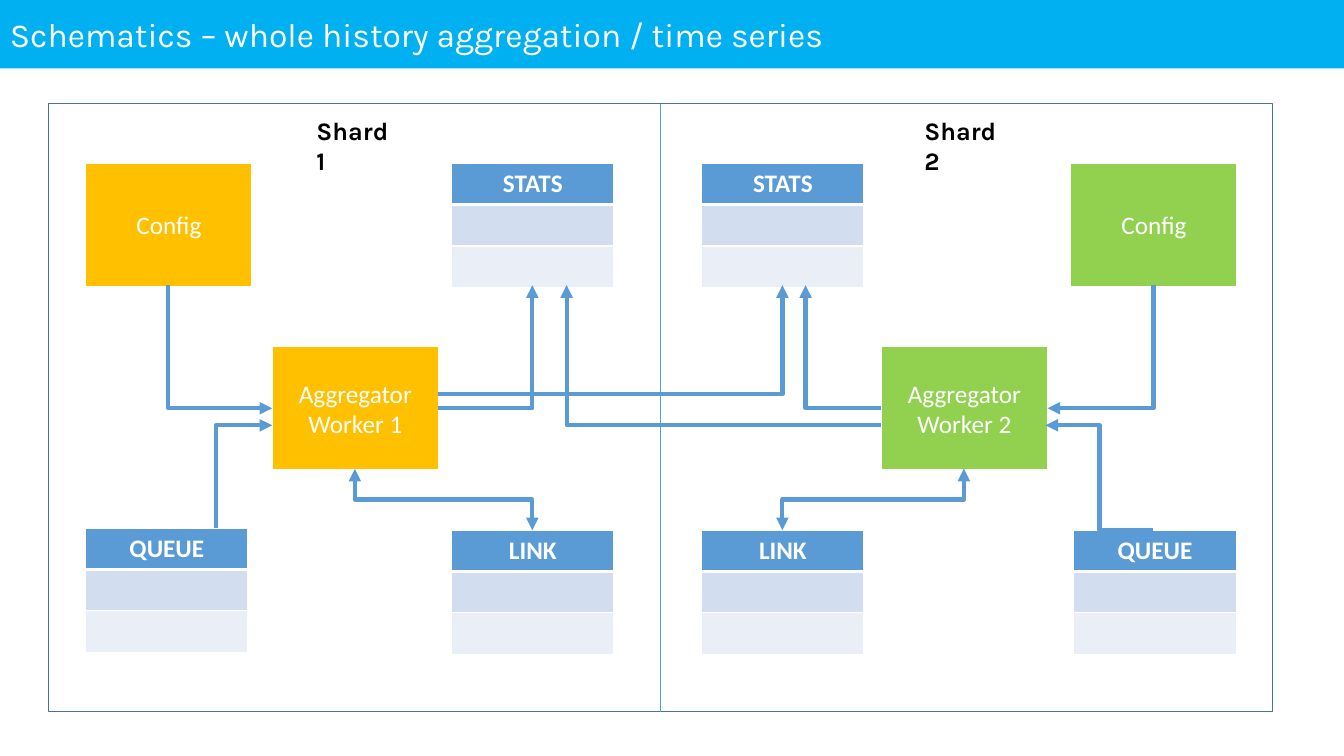
from dataclasses import dataclass
from typing import Optional

from lxml.etree import SubElement
from pptx import Presentation
from pptx.dml.color import RGBColor
from pptx.enum.shapes import MSO_CONNECTOR, MSO_SHAPE
from pptx.enum.text import MSO_ANCHOR, PP_ALIGN
from pptx.oxml import parse_xml
from pptx.oxml.ns import nsdecls, qn
from pptx.shapes.autoshape import Shape
from pptx.shapes.connector import Connector
from pptx.shapes.shapetree import SlideShapes
from pptx.text.text import TextFrame
from pptx.util import Inches, Pt


@dataclass(frozen=True)
class Theme:
    title_bar: str = "00B0F0"
    shard_1: str = "FFC000"
    shard_2: str = "92D050"
    blue: str = "5B9BD5"
    frame: str = "43739E"
    white: str = "FFFFFF"
    black: str = "000000"
    rows: tuple[str, ...] = ("5B9BD5", "D2DEEF", "EAEFF7")
    heading_font: str = "Karla"
    body_font: str = "Calibri"
    title_size: int = 24
    body_size: int = 18


@dataclass(frozen=True)
class Box:
    text: str
    left: float
    top: float
    fill: str


@dataclass(frozen=True)
class Store:
    name: str
    left: float
    top: float


@dataclass(frozen=True)
class Flow:
    """An elbow arrow; bend is the share of the way to its middle leg, None for one corner."""
    start: tuple[float, float]
    end: tuple[float, float]
    vertical_first: bool = True
    bend: Optional[float] = None
    two_way: bool = False


THEME = Theme()
BOX_WIDTH, BOX_HEIGHT = 1.65, 1.22
STORE_WIDTH, ROW_HEIGHT = 1.61, 0.41
TOP, MIDDLE, BOTTOM = 1.62, 3.44, 5.26
STORE_FOOT, WORKER_FOOT = 2.83, 4.65
CONFIG_LANE, QUEUE_LANE, REMOTE_LANE = 4.05, 4.22, 3.91

BOXES = (
    Box("Config", 0.85, TOP, THEME.shard_1),
    Box("Aggregator\nWorker 1", 2.7, MIDDLE, THEME.shard_1),
    Box("Config", 10.62, TOP, THEME.shard_2),
    Box("Aggregator\nWorker 2", 8.74, MIDDLE, THEME.shard_2),
)
STORES = (
    Store("STATS", 4.48, TOP),
    Store("STATS", 6.96, TOP),
    Store("QUEUE", 0.85, 5.24),
    Store("LINK", 4.48, BOTTOM),
    Store("LINK", 6.96, BOTTOM),
    Store("QUEUE", 10.65, BOTTOM),
)
FLOWS = (
    Flow((1.67, STORE_FOOT), (2.7, CONFIG_LANE)),
    Flow((2.14, 5.24), (2.7, QUEUE_LANE)),
    Flow((4.34, CONFIG_LANE), (5.28, STORE_FOOT), vertical_first=False),
    Flow((4.34, REMOTE_LANE), (7.76, STORE_FOOT), vertical_first=False),
    Flow((3.52, WORKER_FOOT), (5.28, BOTTOM), bend=0.5, two_way=True),
    Flow((9.56, WORKER_FOOT), (7.76, BOTTOM), bend=0.5, two_way=True),
    Flow((8.74, CONFIG_LANE), (7.99, STORE_FOOT), vertical_first=False),
    Flow((8.74, QUEUE_LANE), (5.62, STORE_FOOT), vertical_first=False),
    Flow((11.44, STORE_FOOT), (10.39, CONFIG_LANE)),
    Flow((11.44, BOTTOM), (10.37, QUEUE_LANE), vertical_first=False, bend=0.5),
)


def write(frame: TextFrame, text: str, color: str, font: str = THEME.body_font,
          size: int = THEME.body_size, bold: bool = False,
          align: PP_ALIGN = PP_ALIGN.CENTER) -> None:
    frame.text = text
    for paragraph in frame.paragraphs:
        paragraph.alignment = align
        paragraph.font.size = Pt(size)
        for run in paragraph.runs:
            run.font.name = font
            run.font.size = Pt(size)
            run.font.bold = bold
            run.font.color.rgb = RGBColor.from_string(color)


def add_rectangle(shapes: SlideShapes, left: float, top: float, width: float, height: float,
                  fill: Optional[str] = None, line: Optional[str] = None) -> Shape:
    rectangle = shapes.add_shape(MSO_SHAPE.RECTANGLE, Inches(left), Inches(top),
                                 Inches(width), Inches(height))
    rectangle.shadow.inherit = False
    if fill:
        rectangle.fill.solid()
        rectangle.fill.fore_color.rgb = RGBColor.from_string(fill)
    else:
        rectangle.fill.background()
    if line:
        rectangle.line.color.rgb = RGBColor.from_string(line)
        rectangle.line.width = Pt(1)
    else:
        rectangle.line.fill.background()
    rectangle.text_frame.vertical_anchor = MSO_ANCHOR.MIDDLE
    return rectangle


def add_store(shapes: SlideShapes, store: Store) -> None:
    table = shapes.add_table(len(THEME.rows), 1, Inches(store.left), Inches(store.top),
                             Inches(STORE_WIDTH), Inches(ROW_HEIGHT * len(THEME.rows))).table
    for index, color in enumerate(THEME.rows):
        table.rows[index].height = Inches(ROW_HEIGHT)
        cell = table.cell(index, 0)
        write(cell.text_frame, "" if index else store.name, THEME.white, bold=True)
        cell.fill.solid()
        cell.fill.fore_color.rgb = RGBColor.from_string(color)
        above = 3 if index == 1 else 1
        below = 3 if index == 0 else 1
        borders = (("lnL", 1), ("lnR", 1), ("lnT", above), ("lnB", below))
        for position, (side, points) in enumerate(borders):
            cell._tc.get_or_add_tcPr().insert(position, parse_xml(
                f'<a:{side} {nsdecls("a")} w="{Pt(points)}"><a:solidFill>'
                f'<a:srgbClr val="{THEME.white}"/></a:solidFill></a:{side}>'))


def style_line(connector: Connector, points: float) -> None:
    connector.line.color.rgb = RGBColor.from_string(THEME.blue)
    connector.line.width = Pt(points)
    SubElement(connector._element.spPr, qn("a:effectLst"))


def add_flow(shapes: SlideShapes, flow: Flow) -> None:
    """Draw an elbow; one that leaves vertically is laid out sideways and turned by 90°."""
    (x1, y1), (x2, y2) = flow.start, flow.end
    if flow.vertical_first:
        center_x, center_y = (x1 + x2) / 2, (y1 + y2) / 2
        half_width, half_height = (y2 - y1) / 2, (x1 - x2) / 2
        x1, x2 = center_x - half_width, center_x + half_width
        y1, y2 = center_y - half_height, center_y + half_height
    elbow = shapes.add_connector(MSO_CONNECTOR.ELBOW, Inches(x1), Inches(y1),
                                 Inches(x2), Inches(y2))
    properties = elbow._element.spPr
    if flow.vertical_first:
        properties.find(qn("a:xfrm")).set("rot", str(90 * 60000))
    geometry = properties.find(qn("a:prstGeom"))
    if flow.bend is None:
        geometry.set("prst", "bentConnector2")
    else:
        SubElement(geometry.find(qn("a:avLst")), qn("a:gd"), name="adj1",
                   fmla=f"val {round(flow.bend * 100000)}")
    style_line(elbow, 3)
    outline = properties.find(qn("a:ln"))
    if flow.two_way:
        SubElement(outline, qn("a:headEnd"), type="triangle")
    SubElement(outline, qn("a:tailEnd"), type="triangle")


def main() -> None:
    presentation = Presentation()
    presentation.slide_width, presentation.slide_height = Inches(13.33), Inches(7.5)
    shapes = presentation.slides.add_slide(presentation.slide_layouts[6]).shapes

    title = add_rectangle(shapes, 0, 0, 13.33, 0.68, THEME.title_bar)
    write(title.text_frame, "Schematics – whole history aggregation / time series", THEME.white,
          THEME.heading_font, THEME.title_size, align=PP_ALIGN.LEFT)

    shards = add_rectangle(shapes, 0.48, 1.03, 12.14, 6.03, line=THEME.frame)
    divider = shapes.add_connector(MSO_CONNECTOR.STRAIGHT, 0, 0, 0, 0)
    divider.begin_connect(shards, 0)
    divider.end_connect(shards, 2)
    style_line(divider, 0.5)

    for number, left in enumerate((3.04, 9.07), start=1):
        shard = shapes.add_textbox(Inches(left), Inches(1.09), Inches(0.97), Inches(0.4))
        shard.text_frame.word_wrap = True
        write(shard.text_frame, f"Shard {number}", THEME.black, THEME.heading_font,
              bold=True, align=PP_ALIGN.LEFT)
    for box in BOXES:
        shape = add_rectangle(shapes, box.left, box.top, BOX_WIDTH, BOX_HEIGHT,
                              box.fill, THEME.white)
        write(shape.text_frame, box.text, THEME.white)
    for store in STORES:
        add_store(shapes, store)
    for flow in FLOWS:
        add_flow(shapes, flow)

    presentation.save("out.pptx")


if __name__ == "__main__":
    main()
